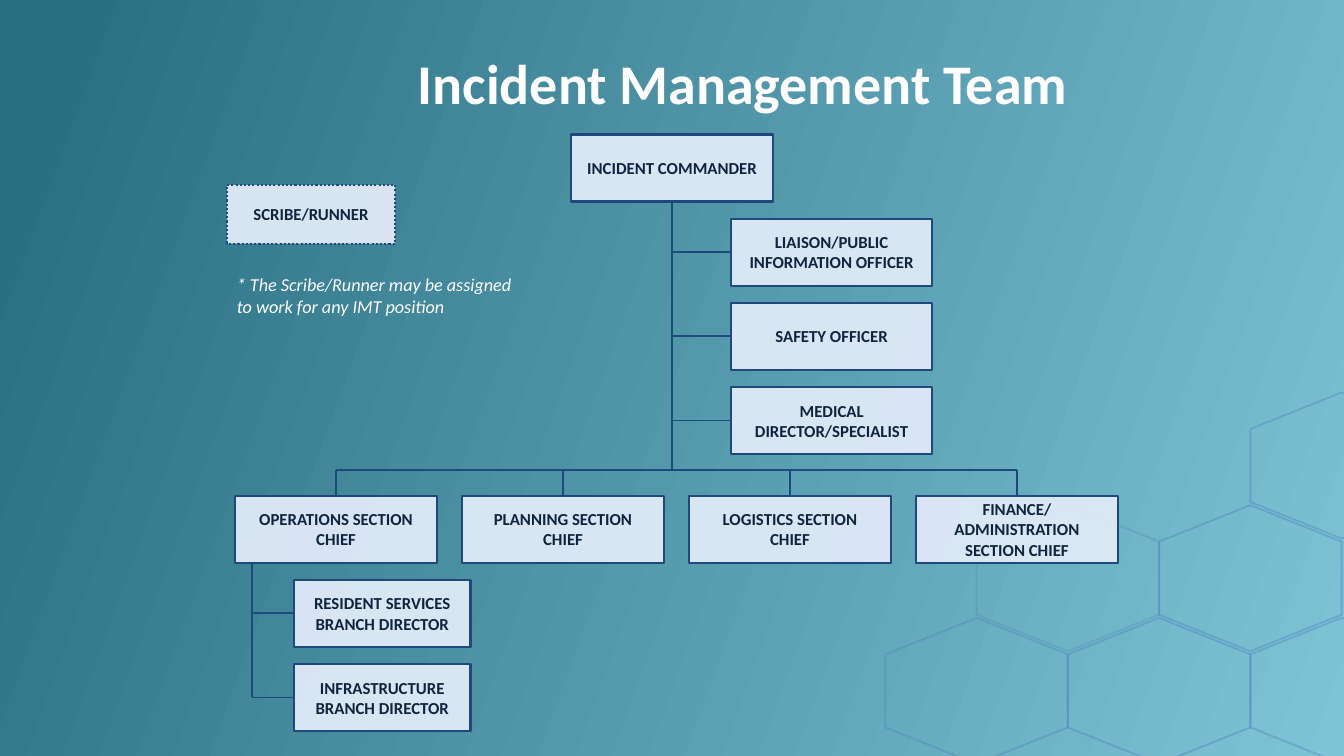
from lxml import etree
from pptx import Presentation
from pptx.dml.color import RGBColor
from pptx.enum.dml import MSO_LINE
from pptx.enum.shapes import MSO_CONNECTOR, MSO_SHAPE
from pptx.enum.text import MSO_ANCHOR, MSO_AUTO_SIZE, PP_ALIGN
from pptx.oxml.ns import qn
from pptx.util import Cm, Pt

RECTANGLE, HEXAGON = MSO_SHAPE.RECTANGLE, MSO_SHAPE.HEXAGON
STRAIGHT = MSO_CONNECTOR.STRAIGHT
DOTTED = MSO_LINE.ROUND_DOT
MIDDLE, TOP = MSO_ANCHOR.MIDDLE, MSO_ANCHOR.TOP
CENTER, LEFT = PP_ALIGN.CENTER, PP_ALIGN.LEFT
FIT_SHAPE = MSO_AUTO_SIZE.SHAPE_TO_FIT_TEXT

TEAL_DARK = RGBColor(0x2A, 0x6F, 0x82)
TEAL_LIGHT = RGBColor(0x7E, 0xC3, 0xD6)
HEXAGON_BLUE = RGBColor(0x4F, 0x81, 0xBD)
BOX_FILL = RGBColor(0xDD, 0xE8, 0xF6)
NAVY = RGBColor(0x1F, 0x49, 0x7D)
INK = RGBColor(0x0F, 0x24, 0x3E)
WHITE = RGBColor(0xFF, 0xFF, 0xFF)

FONT = "Calibri"
TOP_SITE, LEFT_SITE, BOTTOM_SITE = 0, 1, 2
BOX_WIDTH, BOX_HEIGHT = 5.08, 1.69
ROW_PITCH, COLUMN_PITCH = 2.12, 5.72

HONEYCOMB = [(1, 1, 28), (4, 0, 37), (2, 2, 40), (0, 2, 37), (4, 2, 37), (3, 1, 38)]
OFFICERS = ["LIAISON/PUBLIC INFORMATION OFFICER", "SAFETY OFFICER",
            "MEDICAL DIRECTOR/SPECIALIST"]
SECTIONS = ["OPERATIONS SECTION CHIEF", "PLANNING SECTION CHIEF",
            "LOGISTICS SECTION\nCHIEF", "FINANCE/\nADMINISTRATION SECTION CHIEF"]
BRANCHES = ["RESIDENT SERVICES BRANCH DIRECTOR", "INFRASTRUCTURE BRANCH DIRECTOR"]


def set_opacity(shape, tag, percent):
    """Make the fill or line held in the given element partly transparent."""
    color = next(shape.element.spPr.find(qn(tag)).iter(qn("a:srgbClr")))
    etree.SubElement(color, qn("a:alpha")).set("val", str(percent * 1000))


def write_text(shape, text, size, color, alignment, anchor, bold=False, italic=False):
    """Write each line of text as one formatted paragraph."""
    frame = shape.text_frame
    frame.word_wrap = True
    frame.vertical_anchor = anchor
    for index, line in enumerate(text.split("\n")):
        paragraph = frame.add_paragraph() if index else frame.paragraphs[0]
        paragraph.alignment = alignment
        run = paragraph.add_run()
        run.text = line
        run.font.name = FONT
        run.font.size = Pt(size)
        run.font.bold = bold
        run.font.italic = italic
        run.font.color.rgb = color


def add_box(slide, text, left, top, width=BOX_WIDTH, height=BOX_HEIGHT):
    """Add one position box of the chart."""
    shape = slide.shapes.add_shape(RECTANGLE, Cm(left), Cm(top), Cm(width), Cm(height))
    shape.shadow.inherit = False
    shape.fill.solid()
    shape.fill.fore_color.rgb = BOX_FILL
    set_opacity(shape, "a:solidFill", 97)
    shape.line.color.rgb = NAVY
    shape.line.width = Pt(1.5)
    write_text(shape, text, 12, INK, CENTER, MIDDLE, bold=True)
    return shape


def add_line(slide, x1, y1, x2, y2, box=None, site=None):
    """Add a chart line, with its start glued to a box if one is given."""
    connector = slide.shapes.add_connector(STRAIGHT, Cm(x1), Cm(y1), Cm(x2), Cm(y2))
    if box is not None:
        connector.begin_connect(box, site)
    connector.line.color.rgb = NAVY
    connector.line.width = Pt(1.25)
    etree.SubElement(connector.element.spPr, qn("a:effectLst"))


def add_background(slide):
    """Fill the slide with the teal gradient."""
    fill = slide.background.fill
    fill.gradient()
    fill.gradient_angle = 340
    for stop, position, color in zip(fill.gradient_stops, (0.05, 1), (TEAL_DARK, TEAL_LIGHT)):
        stop.position = position
        stop.color.rgb = color


def add_honeycomb(slide, left, top, width=3.68, height=4.6):
    """Add the outlined hexagons on a staggered grid."""
    for column, row, opacity in HONEYCOMB:
        shape = slide.shapes.add_shape(HEXAGON, Cm(left + 2.3 * column),
                                       Cm(top + 2.84 * row), Cm(width), Cm(height))
        shape.rotation = 90
        shape.shadow.inherit = False
        shape.fill.background()
        shape.line.color.rgb = HEXAGON_BLUE
        shape.line.width = Pt(1.3)
        set_opacity(shape, "a:ln", opacity)


def add_title(slide, left, top, width, height):
    """Place and write the slide title."""
    title = slide.shapes.title
    title.left, title.top, title.width, title.height = map(Cm, (left, top, width, height))
    write_text(title, "Incident Management Team", 40, WHITE, CENTER, MIDDLE, bold=True)


def add_command(slide, left, top, trunk_end):
    """Add the commander, the trunk and the officers hanging from it."""
    trunk = left + BOX_WIDTH / 2
    commander = add_box(slide, "INCIDENT COMMANDER", left, top)
    add_line(slide, trunk, top + BOX_HEIGHT, trunk, trunk_end, commander, BOTTOM_SITE)
    officer_left = left + 4.02
    for row, name in enumerate(OFFICERS, 1):
        officer_top = top + ROW_PITCH * row
        middle = officer_top + BOX_HEIGHT / 2
        officer = add_box(slide, name, officer_left, officer_top)
        add_line(slide, officer_left, middle, trunk, middle, officer, LEFT_SITE)


def add_sections(slide, left, top, bus):
    """Add the row of section chiefs under their shared line."""
    centers = [left + COLUMN_PITCH * column + BOX_WIDTH / 2
               for column in range(len(SECTIONS))]
    add_line(slide, centers[0], bus, centers[-1], bus)
    for name, center in zip(SECTIONS, centers):
        section = add_box(slide, name, center - BOX_WIDTH / 2, top)
        add_line(slide, center, top, center, bus, section, TOP_SITE)


def add_branches(slide, left, top, width):
    """Add the branch directors below the operations section."""
    trunk = left - 1.06
    for row, name in enumerate(BRANCHES):
        branch_top = top + ROW_PITCH * row
        middle = branch_top + BOX_HEIGHT / 2
        branch = add_box(slide, name, left, branch_top, width)
        add_line(slide, left, middle, trunk, middle, branch, LEFT_SITE)
    add_line(slide, trunk, top - ROW_PITCH + BOX_HEIGHT, trunk, middle)


def add_scribe(slide, left, top):
    """Add the dotted scribe box with its note."""
    scribe = add_box(slide, "SCRIBE/RUNNER", left, top, 4.24, 1.48)
    scribe.line.dash_style = DOTTED
    note = slide.shapes.add_textbox(Cm(left), Cm(top + 2.1), Cm(7.62), Cm(1.38))
    note.text_frame.auto_size = FIT_SHAPE
    write_text(note, "* The Scribe/Runner may be assigned to work for any IMT position",
               13, WHITE, LEFT, TOP, italic=True)


def main():
    """Build and save the slide."""
    presentation = Presentation()
    presentation.slide_width = Cm(33.87)
    presentation.slide_height = Cm(19.05)
    slide = presentation.slides.add_slide(presentation.slide_layouts[5])
    add_background(slide)
    add_honeycomb(slide, 22.77, 9.43)
    add_title(slide, 9.09, 0.76, 19.25, 2.62)
    add_command(slide, 14.4, 3.39, 11.85)
    add_sections(slide, 5.93, 12.49, 11.85)
    add_branches(slide, 7.41, 14.61, 4.45)
    add_scribe(slide, 5.72, 4.66)
    presentation.save("out.pptx")


if __name__ == "__main__":
    main()
